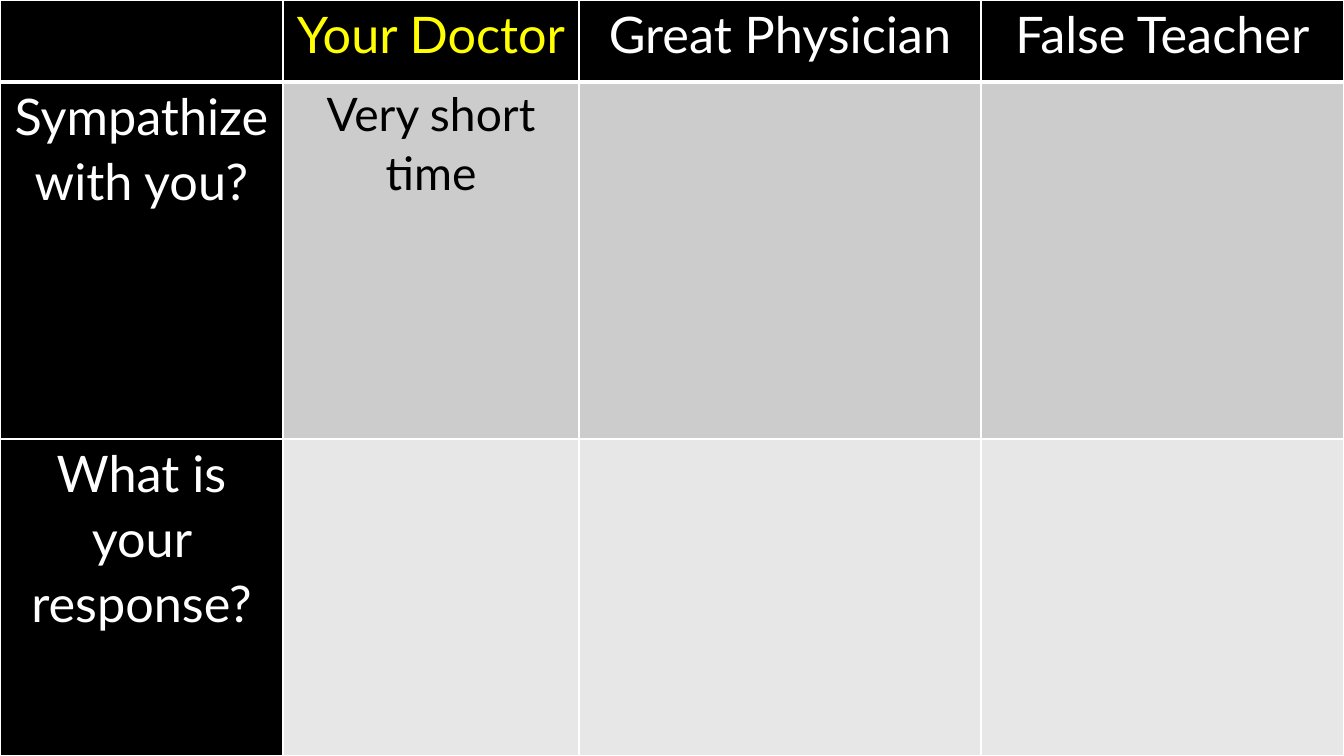
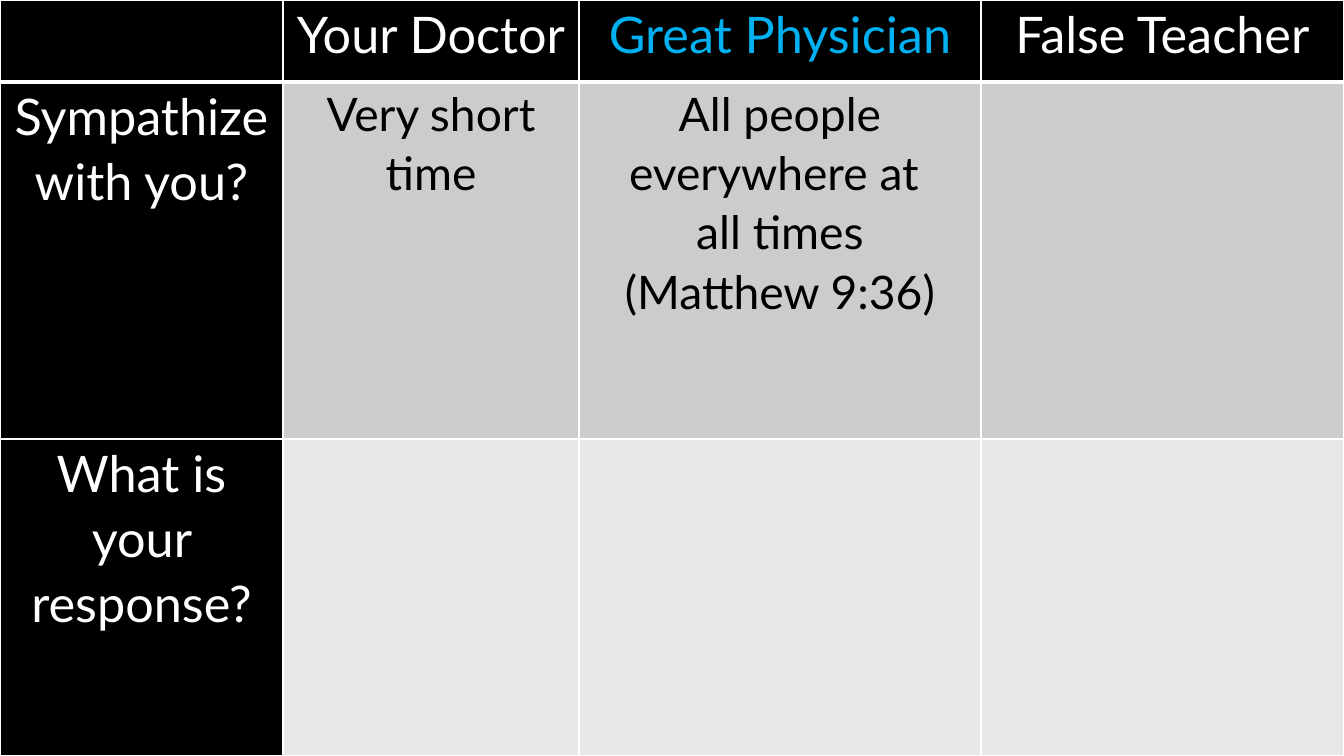
"""Build two slides comparing a doctor, the Great Physician and a false teacher."""
from lxml.etree import SubElement
from pptx import Presentation
from pptx.dml.color import RGBColor
from pptx.enum.text import PP_ALIGN
from pptx.oxml.ns import qn
from pptx.util import Emu, Pt

BLACK, WHITE, YELLOW, BLUE = "000000", "FFFFFF", "FFFF00", "00B0F0"
ROW_FILLS = [BLACK, "CCCCCC", "E7E7E7"]
FONT = "Lato"
LABEL_SIZE, ANSWER_SIZE = 36, 33
LINE_SPACING = 1.07
THIN, THICK = 1, 3

COLUMN_WIDTHS = [283, 296, 402, 363]
ROW_HEIGHTS = [82, 357, 317]
SIDE_MARGIN = 7

HEADINGS = ["", "Your Doctor", "Great Physician", "False Teacher"]
QUESTIONS = ["Sympathize with you?", "What is your response?"]
DOCTOR_ANSWER = "Very short time"
PHYSICIAN_ANSWER = "All people everywhere at \nall times\n(Matthew 9:36)"
SLIDES = [
    {"highlight": (1, YELLOW), "answers": [[DOCTOR_ANSWER, "", ""], ["", "", ""]]},
    {"highlight": (2, BLUE), "answers": [[DOCTOR_ANSWER, PHYSICIAN_ANSWER, ""], ["", "", ""]]},
]


def px(length):
    return Emu(round(length * 914400 / 100.8))


def rgb(value):
    return RGBColor.from_string(value)


def set_borders(cell, widths):
    properties = cell._tc.get_or_add_tcPr()
    for position, (side, width) in enumerate(widths.items()):
        border = SubElement(properties, qn(f"a:ln{side}"), w=str(Pt(width)))
        color = SubElement(SubElement(border, qn("a:solidFill")), qn("a:srgbClr"))
        color.set("val", WHITE)
        properties.insert(position, border)


def fill_cell(cell, text, fill, color, size):
    cell.fill.solid()
    cell.fill.fore_color.rgb = rgb(fill)
    cell.margin_left = cell.margin_right = px(SIDE_MARGIN)
    cell.margin_top = cell.margin_bottom = 0
    cell.text_frame.text = text
    for paragraph in cell.text_frame.paragraphs:
        paragraph.alignment = PP_ALIGN.CENTER
        paragraph.line_spacing = LINE_SPACING
        for run in paragraph.runs:
            run.font.name = FONT
            run.font.size = Pt(size)
            run.font.bold = False
            run.font.color.rgb = rgb(color)


def add_comparison(slide, highlight, answers):
    rows = [HEADINGS] + [[question, *row] for question, row in zip(QUESTIONS, answers)]
    comparison = slide.shapes.add_table(
        len(rows), len(HEADINGS), 0, 0, px(sum(COLUMN_WIDTHS)), px(sum(ROW_HEIGHTS))
    ).table
    for column, width in zip(comparison.columns, COLUMN_WIDTHS):
        column.width = px(width)
    for row, height in zip(comparison.rows, ROW_HEIGHTS):
        row.height = px(height)

    highlight_column, highlight_color = highlight
    for r, texts in enumerate(rows):
        for c, text in enumerate(texts):
            is_label = r == 0 or c == 0
            fill = BLACK if is_label else ROW_FILLS[r]
            color = WHITE if is_label else BLACK
            if (r, c) == (0, highlight_column):
                color = highlight_color
            cell = comparison.cell(r, c)
            fill_cell(cell, text, fill, color, LABEL_SIZE if is_label else ANSWER_SIZE)
            set_borders(cell, {
                "L": THIN,
                "R": THIN,
                "T": THICK if r == 1 else THIN,
                "B": THICK if r == 0 else THIN,
            })


def main():
    deck = Presentation()
    deck.slide_width = px(sum(COLUMN_WIDTHS))
    deck.slide_height = px(sum(ROW_HEIGHTS))
    backdrop = deck.slide_master.background.fill
    backdrop.solid()
    backdrop.fore_color.rgb = rgb(BLACK)
    blank = deck.slide_layouts[6]
    for content in SLIDES:
        add_comparison(deck.slides.add_slide(blank), **content)
    deck.save("out.pptx")


if __name__ == "__main__":
    main()
